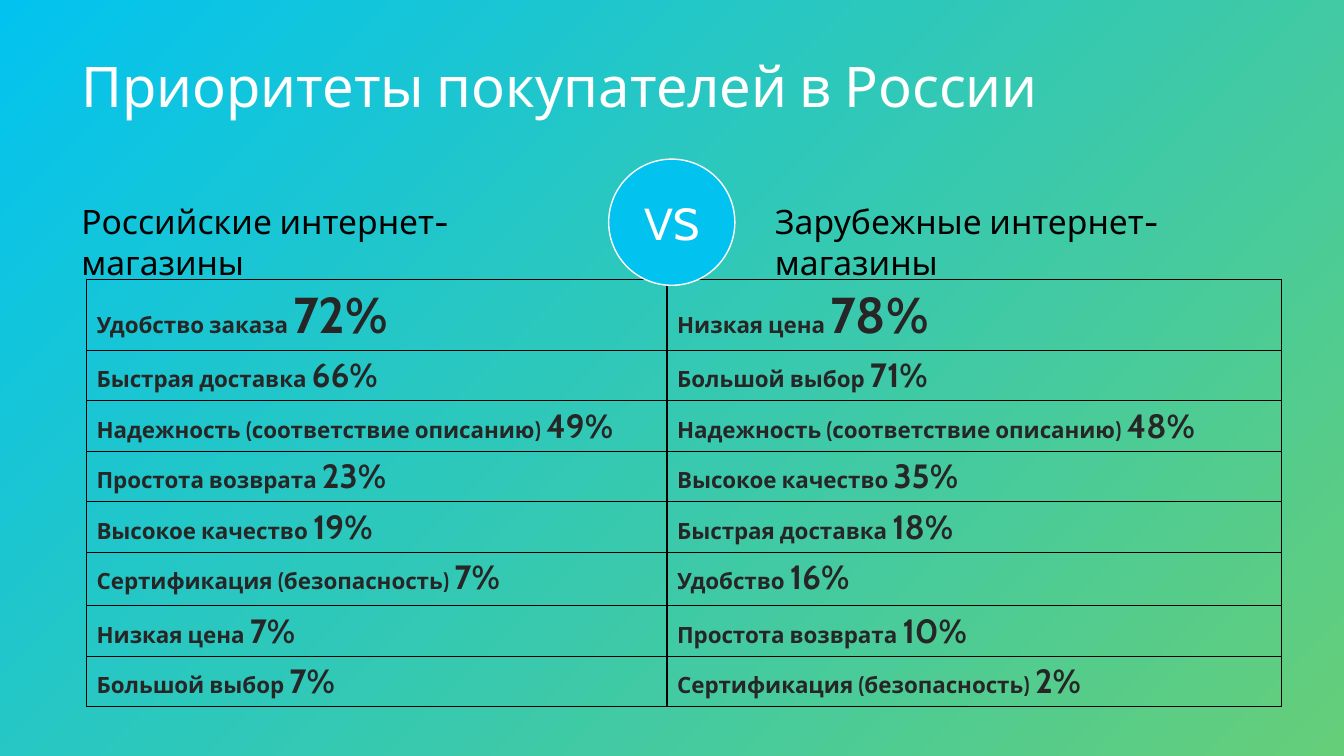
from lxml import etree
from pptx import Presentation
from pptx import util as u
from pptx.dml.color import RGBColor
from pptx.enum import shapes, text
from pptx.oxml import ns

BLUE = RGBColor(0x02, 0xC3, 0xEF)
GREEN = RGBColor(0x65, 0xCE, 0x79)
WHITE = RGBColor(0xFF, 0xFF, 0xFF)
BLACK = RGBColor(0, 0, 0)
GRAPHITE = RGBColor(0x26, 0x26, 0x26)
FONT = "Cabin"

COLUMN_WIDTHS = [14.63, 15.49]
ROW_HEIGHTS = [1.78] + [1.27] * 4 + [1.35] + [1.27] * 2
PRIORITIES = [
    (("Удобство заказа", 72), ("Низкая цена", 78)),
    (("Быстрая доставка", 66), ("Большой выбор", 71)),
    (("Надежность (соответствие описанию)", 49),
     ("Надежность (соответствие описанию)", 48)),
    (("Простота возврата", 23), ("Высокое качество", 35)),
    (("Высокое качество", 19), ("Быстрая доставка", 18)),
    (("Сертификация (безопасность)", 7), ("Удобство", 16)),
    (("Низкая цена", 7), ("Простота возврата", 10)),
    (("Большой выбор", 7), ("Сертификация (безопасность)", 2)),
]


def add_span(para, words, size, color, **formats):
    span = para.add_run()
    span.text = words
    span.font.color.rgb = color
    for name, value in {"name": FONT, "size": u.Pt(size), **formats}.items():
        setattr(span.font, name, value)


def add_label(page, place, words, size, color, **para_formats):
    box = page.shapes.add_textbox(*map(u.Cm, place))
    box.text_frame.word_wrap = True
    box.text_frame.auto_size = text.MSO_AUTO_SIZE.SHAPE_TO_FIT_TEXT
    para = box.text_frame.paragraphs[0]
    for name, value in para_formats.items():
        setattr(para, name, value)
    add_span(para, words, size, color)


def paint_background(page):
    fill = page.background.fill
    fill.gradient()
    fill.gradient_angle = 315
    for stop, color, position in zip(fill.gradient_stops, (BLUE, GREEN), (0, 1)):
        stop.color.rgb = color
        stop.position = position


def outline_cell(cell):
    cell_format = cell._tc.get_or_add_tcPr()
    for side in ("a:lnL", "a:lnR", "a:lnT", "a:lnB"):
        line = etree.SubElement(cell_format, ns.qn(side), w=str(u.Pt(1)))
        fill = etree.SubElement(line, ns.qn("a:solidFill"))
        etree.SubElement(fill, ns.qn("a:srgbClr"), val=str(BLACK))


def add_priorities(page, left, top):
    size = sum(COLUMN_WIDTHS), sum(ROW_HEIGHTS)
    frame = page.shapes.add_table(len(ROW_HEIGHTS), len(COLUMN_WIDTHS),
                                  *map(u.Cm, (left, top, *size)))
    table = frame.table
    table.first_row = table.horz_banding = False
    for column, width in zip(table.columns, COLUMN_WIDTHS):
        column.width = u.Cm(width)
    for index, (row, entries) in enumerate(zip(table.rows, PRIORITIES)):
        row.height = u.Cm(ROW_HEIGHTS[index])
        for cell, (reason, share) in zip(row.cells, entries):
            outline_cell(cell)
            cell.fill.background()
            para = cell.text_frame.paragraphs[0]
            add_span(para, f"{reason} ", 16, GRAPHITE, bold=True)
            # The leading priority is shown larger
            add_span(para, f"{share}%", 24 if index else 36, GRAPHITE, bold=True)


def add_badge(page, left, top, diameter, words):
    badge = page.shapes.add_shape(shapes.MSO_SHAPE.OVAL,
                                  *map(u.Cm, (left, top, diameter, diameter)))
    badge.shadow.inherit = False
    badge.fill.solid()
    badge.fill.fore_color.rgb = BLUE
    badge.line.color.rgb = WHITE
    badge.line.width = u.Pt(1)
    frame = badge.text_frame
    margins = dict.fromkeys(("margin_left", "margin_right",
                             "margin_top", "margin_bottom"), u.Cm(0.13))
    for name, value in {**margins, "vertical_anchor": text.MSO_ANCHOR.MIDDLE}.items():
        setattr(frame, name, value)
    frame.paragraphs[0].alignment = text.PP_ALIGN.CENTER
    add_span(frame.paragraphs[0], words, 32, WHITE)


def main():
    deck = Presentation()
    deck.slide_width, deck.slide_height = u.Cm(33.87), u.Cm(19.05)
    page = deck.slides.add_slide(deck.slide_layouts[6])
    paint_background(page)

    # Title and column headings
    add_label(page, (1.8, 1.27, 27.38, 1.85), "Приоритеты покупателей в России",
              40, WHITE, line_spacing=u.Pt(45))
    add_label(page, (1.8, 4.95, 13.34, 1.27), "Российские интернет-магазины", 24, BLACK)
    add_label(page, (19.28, 4.95, 13.64, 1.27), "Зарубежные интернет-магазины", 24, BLACK)

    # Comparison table with the badge over its top edge
    add_priorities(page, 2.18, 7.05)
    add_badge(page, 15.34, 4.01, 3.18, "VS")

    deck.save("out.pptx")


if __name__ == "__main__":
    main()
